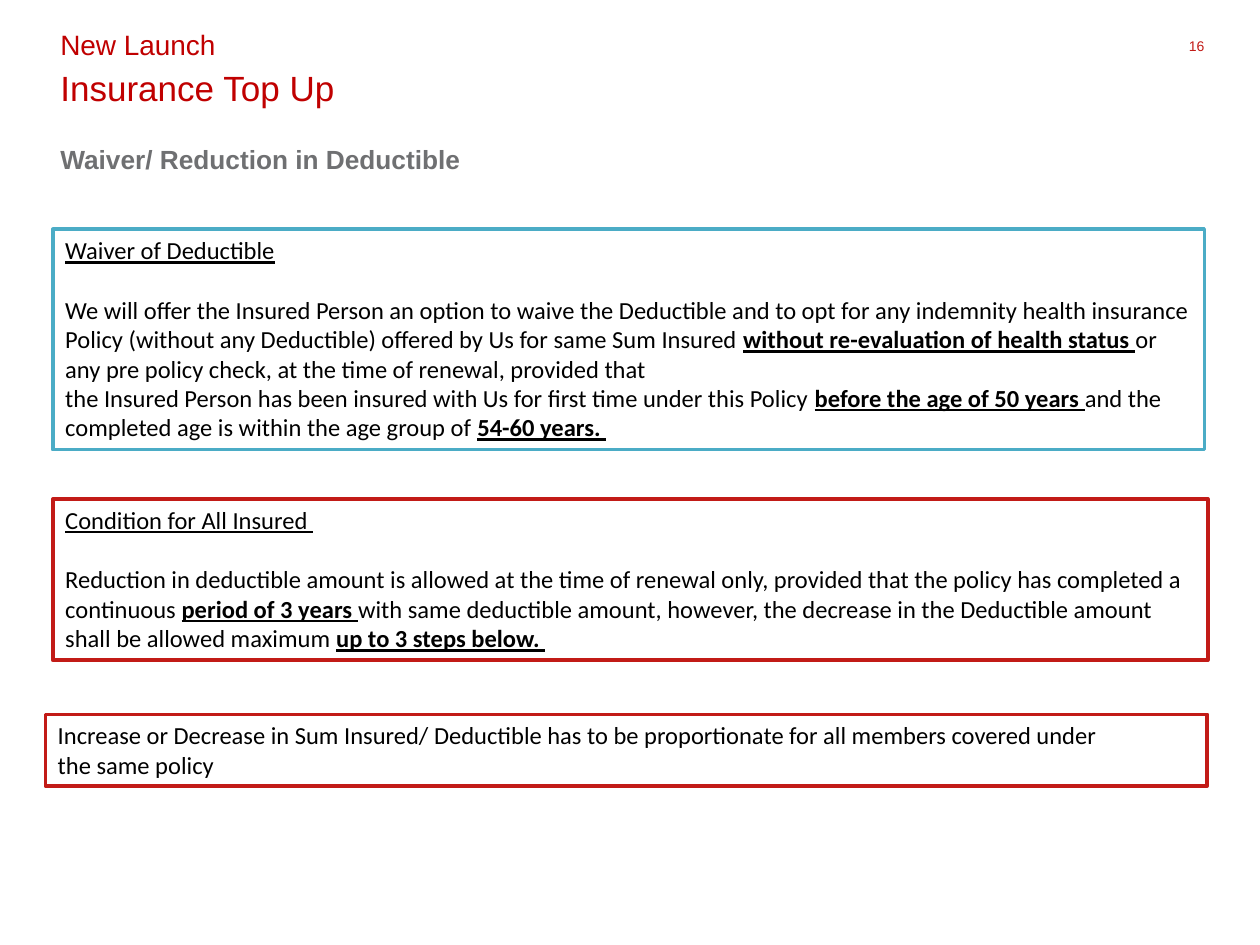
"""Build the slide on waiver and reduction of the deductible."""
from pptx import Presentation
from pptx.dml.color import RGBColor
from pptx.enum.shapes import MSO_SHAPE
from pptx.enum.text import MSO_ANCHOR, PP_ALIGN
from pptx.util import Pt

RECTANGLE = MSO_SHAPE.RECTANGLE
TOP = MSO_ANCHOR.TOP
LEFT, RIGHT = PP_ALIGN.LEFT, PP_ALIGN.RIGHT

WHITE = RGBColor(0xFF, 0xFF, 0xFF)
BLACK = RGBColor(0, 0, 0)
GRAY = RGBColor(0x6F, 0x70, 0x72)
DARK_RED = RGBColor(0xC0, 0, 0)
RED = RGBColor(0xC2, 0x1B, 0x17)
TEAL = RGBColor(0x4B, 0xAC, 0xC6)

PLAIN, UNDERLINED, STRONG = (False, False), (False, True), (True, True)

WAIVER = [
    [("Waiver of Deductible", UNDERLINED)],
    [
        ("We will offer the Insured Person an option to waive the Deductible and to opt for any "
         "indemnity health insurance Policy (without any Deductible) offered by Us for same "
         "Sum Insured ", PLAIN),
        ("without re-evaluation of health status", STRONG),
        (" ", UNDERLINED),
        ("or any pre policy check, at the time of renewal, provided that", PLAIN),
    ],
    [
        ("the Insured Person has been insured with Us for first time under this Policy ", PLAIN),
        ("before the age of 50 years ", STRONG),
        ("and the completed age is within the age group of ", PLAIN),
        ("54-60 years. ", STRONG),
    ],
]
CONDITION = [
    [("Condition for All Insured ", UNDERLINED)],
    [
        ("Reduction in deductible amount is allowed at the time of renewal only, provided that "
         "the policy has completed a continuous ", PLAIN),
        ("period of 3 years ", STRONG),
        ("with same deductible amount, however, the decrease in the Deductible amount shall be "
         "allowed maximum ", PLAIN),
        ("up to 3 steps below. ", STRONG),
    ],
]
PROPORTION = [
    [("Increase or Decrease in Sum Insured/ Deductible has to be proportionate for all members "
      "covered under", PLAIN)],
    [("the same policy", PLAIN)],
]


class SlideBuilder:
    """Hold the style and the current slide."""

    heading_font = "Arial"
    body_font = "Calibri"
    body_size = 14
    heading_gap = 17.1
    border = 2
    inset = (7.2, 3.6)

    def __init__(self, slide):
        self.slide = slide

    def prepare(self, frame, inset):
        frame.word_wrap = True
        frame.vertical_anchor = TOP
        frame.margin_left = frame.margin_right = Pt(inset[0])
        frame.margin_top = frame.margin_bottom = Pt(inset[1])

    def add_run(self, paragraph, text, name, size, color, bold=False, underline=False):
        run = paragraph.add_run()
        run.text = text
        font = run.font
        font.name, font.size, font.color.rgb = name, Pt(size), color
        font.bold, font.underline = bold, underline

    def label(self, box, text, size, color, bold=False, align=LEFT, spacing=None, inset=inset):
        shape = self.slide.shapes.add_textbox(*map(Pt, box))
        self.prepare(shape.text_frame, inset)
        paragraph = shape.text_frame.paragraphs[0]
        paragraph.alignment = align
        if spacing:
            paragraph.line_spacing = Pt(spacing)
        self.add_run(paragraph, text, self.heading_font, size, color, bold)

    def panel(self, box, color, paragraphs, headed=True):
        shape = self.slide.shapes.add_shape(RECTANGLE, *map(Pt, box))
        shape.shadow.inherit = False
        shape.fill.solid()
        shape.fill.fore_color.rgb = WHITE
        shape.line.color.rgb = color
        shape.line.width = Pt(self.border)
        frame = shape.text_frame
        self.prepare(frame, self.inset)
        for index, runs in enumerate(paragraphs):
            paragraph = frame.add_paragraph() if index else frame.paragraphs[0]
            paragraph.alignment = LEFT
            if headed and index == 1:
                paragraph.space_before = Pt(self.heading_gap)
            for text, (bold, underline) in runs:
                self.add_run(paragraph, text, self.body_font, self.body_size, BLACK,
                             bold, underline)


def main():
    presentation = Presentation()
    presentation.slide_width, presentation.slide_height = Pt(720), Pt(540)
    builder = SlideBuilder(presentation.slides.add_slide(presentation.slide_layouts[6]))
    builder.label((672.5, 21.6, 15.8, 14.4), "16", 8, RED, align=RIGHT, inset=(0, 0))
    builder.label((27.4, 36.7, 660, 41), "Insurance Top Up", 20, DARK_RED, spacing=22)
    builder.label((27.4, 78.5, 660, 25.2), "Waiver/ Reduction in Deductible", 15, GRAY, bold=True)
    builder.label((27.4, 12.2, 626.4, 25.9), "New Launch", 16, DARK_RED)
    builder.panel((30.2, 285.1, 660, 92.2), RED, CONDITION)
    builder.panel((30.2, 131, 658, 126), TEAL, WAIVER)
    builder.panel((25.9, 408.2, 664, 41), RED, PROPORTION, headed=False)
    presentation.save("out.pptx")


if __name__ == "__main__":
    main()
